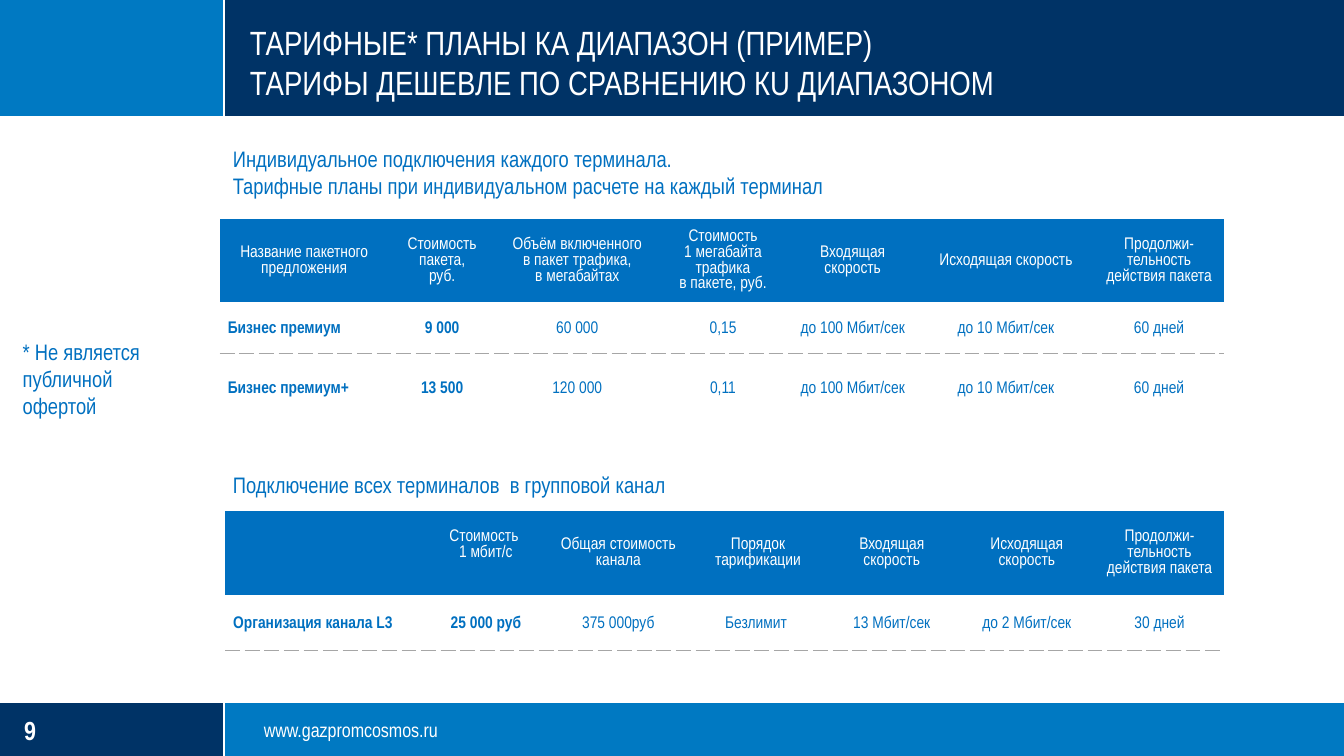
"""Build the slide with tariff plans: two tables under a title band."""
from copy import deepcopy

from lxml import etree
from pptx import Presentation
from pptx import util as u
from pptx.dml.color import RGBColor
from pptx.enum import shapes, text
from pptx.oxml import ns

COLUMNS, ROWS = 1000, 562.5
UNIT = u.Inches(0.01)
WHITE = RGBColor(0xFF, 0xFF, 0xFF)
NAVY = RGBColor(0x00, 0x33, 0x66)
AZURE = RGBColor(0x00, 0x79, 0xC2)
BLUE = RGBColor(0x00, 0x70, 0xC0)
GRAY = RGBColor(0xA6, 0xA6, 0xA6)
FONT = "Arial Narrow"
NO_STYLE = "{2D5ABB26-0587-4C30-8999-92F81FD0307C}"

SIDE, HEAD, FOOT = 167, 87, 523
RULE, HEAD_RULE, FOOT_RULE = 166.5, 87.5, 522.5
TABLE_LEFT = 163.5

DURATION = "Продолжи-тельность действия пакета"
INDIVIDUAL_PLANS = [
    ["Название пакетного предложения", "Стоимость пакета,\nруб.",
     "Объём включенного\nв пакет трафика,\nв мегабайтах",
     "Стоимость\n1 мегабайта трафика\nв пакете, руб.",
     "Входящая скорость", "Исходящая скорость", DURATION],
    ["Бизнес премиум", "9 000", "60 000", "0,15",
     "до 100 Мбит/сек", "до 10 Мбит/сек", "60 дней"],
    ["Бизнес премиум+", "13 500", "120 000", "0,11",
     "до 100 Мбит/сек", "до 10 Мбит/сек", "60 дней"],
]
GROUP_PLANS = [
    ["", "Стоимость \n1 мбит/с", "Общая стоимость канала", "Порядок тарификации",
     "Входящая скорость", "Исходящая скорость", DURATION],
    ["Организация канала L3", "25 000 руб", "375 000руб", "Безлимит ",
     "13 Мбит/сек", "до 2 Мбит/сек", "30 дней"],
]


def grid(*counts):
    """Turn counts of grid units into lengths."""
    return [int(count * UNIT) for count in counts]


def apply(target, values):
    """Set each attribute of the target from a dict."""
    for name, value in values.items():
        setattr(target, name, value)


def write(frame, words, size, color, bold=False, **paragraph_format):
    """Put one paragraph in a frame, with line breaks in the same font."""
    paragraph = frame.paragraphs[0]
    paragraph.text = words
    apply(paragraph, paragraph_format)
    for run in paragraph.runs:
        apply(run.font, {"name": FONT, "size": u.Pt(size), "bold": bold})
        run.font.color.rgb = color
    for line_break in paragraph._p.findall(ns.qn("a:br")):
        line_break.append(deepcopy(paragraph.runs[0].font._element))


def add_band(slide, area, color):
    """Draw a plain rectangle."""
    band = slide.shapes.add_shape(shapes.MSO_SHAPE.RECTANGLE, *grid(*area))
    band.shadow.inherit = False
    band.fill.solid()
    band.fill.fore_color.rgb = color
    band.line.fill.background()


def add_rule(slide, ends):
    """Draw a thin white dividing line."""
    rule = slide.shapes.add_connector(shapes.MSO_CONNECTOR.STRAIGHT, *grid(*ends))
    rule.line.color.rgb = WHITE
    rule.line.width = u.Pt(1.25)
    etree.SubElement(rule._element.spPr, ns.qn("a:effectLst"))


def add_label(slide, area, words, size, color, bold=False, **frame_format):
    """Add a wrapping text box."""
    frame = slide.shapes.add_textbox(*grid(*area)).text_frame
    apply(frame, {"word_wrap": True, **frame_format})
    write(frame, words, size, color, bold)


def add_border(cell, side):
    """Give one side of a cell a dashed gray border."""
    border = etree.Element(ns.qn(f"a:{side}"), w=str(u.Pt(0.75)))
    fill = etree.SubElement(border, ns.qn("a:solidFill"))
    etree.SubElement(fill, ns.qn("a:srgbClr"), val=str(GRAY))
    etree.SubElement(border, ns.qn("a:prstDash"), val="sysDash")
    cell._tc.get_or_add_tcPr().insert(0, border)


def format_cell(cell, words, row, column):
    """Fill in a header cell or a body cell."""
    apply(cell, {"vertical_anchor": text.MSO_ANCHOR.MIDDLE,
                 "margin_left": u.Inches(0.06), "margin_right": u.Inches(0.06),
                 "margin_top": 0, "margin_bottom": 0})
    if row == 0:
        cell.fill.solid()
        cell.fill.fore_color.rgb = BLUE
        write(cell.text_frame, words, 9, WHITE, alignment=text.PP_ALIGN.CENTER)
    else:
        cell.fill.background()
        align = text.PP_ALIGN.CENTER if column else text.PP_ALIGN.LEFT
        write(cell.text_frame, words, 9, BLUE, bold=column < 2, alignment=align,
              line_spacing=1.15, space_after=u.Pt(10))
        add_border(cell, "lnB" if row == 1 else "lnT")


def add_plans(slide, left, top, widths, heights, plans):
    """Add a tariff table and return it."""
    area = grid(left, top, sum(widths), sum(heights))
    table = slide.shapes.add_table(len(heights), len(widths), *area).table
    apply(table, {"first_row": False, "horz_banding": False})
    table._tbl.tblPr.find(ns.qn("a:tableStyleId")).text = NO_STYLE
    for column, width in zip(table.columns, grid(*widths)):
        column.width = width
    for line, height in zip(table.rows, grid(*heights)):
        line.height = height
    for row, entries in enumerate(plans):
        for column, words in enumerate(entries):
            format_cell(table.cell(row, column), words, row, column)
    return table


def add_frame(slide):
    """Draw the head and foot bands with their dividing lines."""
    add_band(slide, (0, FOOT, COLUMNS, ROWS - FOOT), AZURE)
    add_band(slide, (0, 0, COLUMNS, HEAD), NAVY)
    add_band(slide, (0, 0, SIDE, HEAD), AZURE)
    add_band(slide, (0, FOOT, SIDE, ROWS - FOOT), NAVY)
    for ends in ((0, FOOT_RULE, COLUMNS, FOOT_RULE), (RULE, FOOT_RULE, RULE, ROWS),
                 (RULE, 0, RULE, HEAD_RULE), (0, HEAD_RULE, COLUMNS, HEAD_RULE)):
        add_rule(slide, ends)


def main():
    """Build and save the slide."""
    deck = Presentation()
    deck.slide_width, deck.slide_height = grid(COLUMNS, ROWS)
    slide = deck.slides.add_slide(deck.slide_layouts[6])
    flush = dict.fromkeys(
        ("margin_left", "margin_top", "margin_right", "margin_bottom"), 0)

    add_frame(slide)
    add_label(slide, (18, 531.5, 101, 24), "9", 14, WHITE, bold=True,
              vertical_anchor=text.MSO_ANCHOR.MIDDLE, **flush)
    add_label(slide, (186, 0, 802, 76),
              "ТАРИФНЫЕ* ПЛАНЫ КА ДИАПАЗОН (ПРИМЕР)\n"
              "ТАРИФЫ ДЕШЕВЛЕ ПО СРАВНЕНИЮ КU ДИАПАЗОНОМ", 18, WHITE,
              vertical_anchor=text.MSO_ANCHOR.BOTTOM, **flush)

    add_plans(slide, TABLE_LEFT, 163, (125.5, 80, 121, 96, 97, 131, 97),
              (62, 38, 52), INDIVIDUAL_PLANS)
    add_label(slide, (TABLE_LEFT, 103, 723, 50),
              "Индивидуальное подключения каждого терминала.\n"
              "Тарифные планы при индивидуальном расчете на каждый терминал", 12, BLUE)

    group_table = add_plans(slide, 167.5, 380, (150, 88, 109, 99, 100, 101, 96.5),
                            (63, 41), GROUP_PLANS)
    group_table.cell(0, 1).margin_bottom = u.Inches(0.12)
    add_label(slide, (TABLE_LEFT, 345.5, 723, 30),
              "Подключение всех терминалов  в групповой канал", 12, BLUE)

    add_label(slide, (7, 247, 138, 71), "* Не является публичной офертой", 12, BLUE)
    add_label(slide, (186.5, 529.5, 173, 28), "www.gazpromcosmos.ru", 10.5, WHITE)
    deck.save("out.pptx")


if __name__ == "__main__":
    main()
